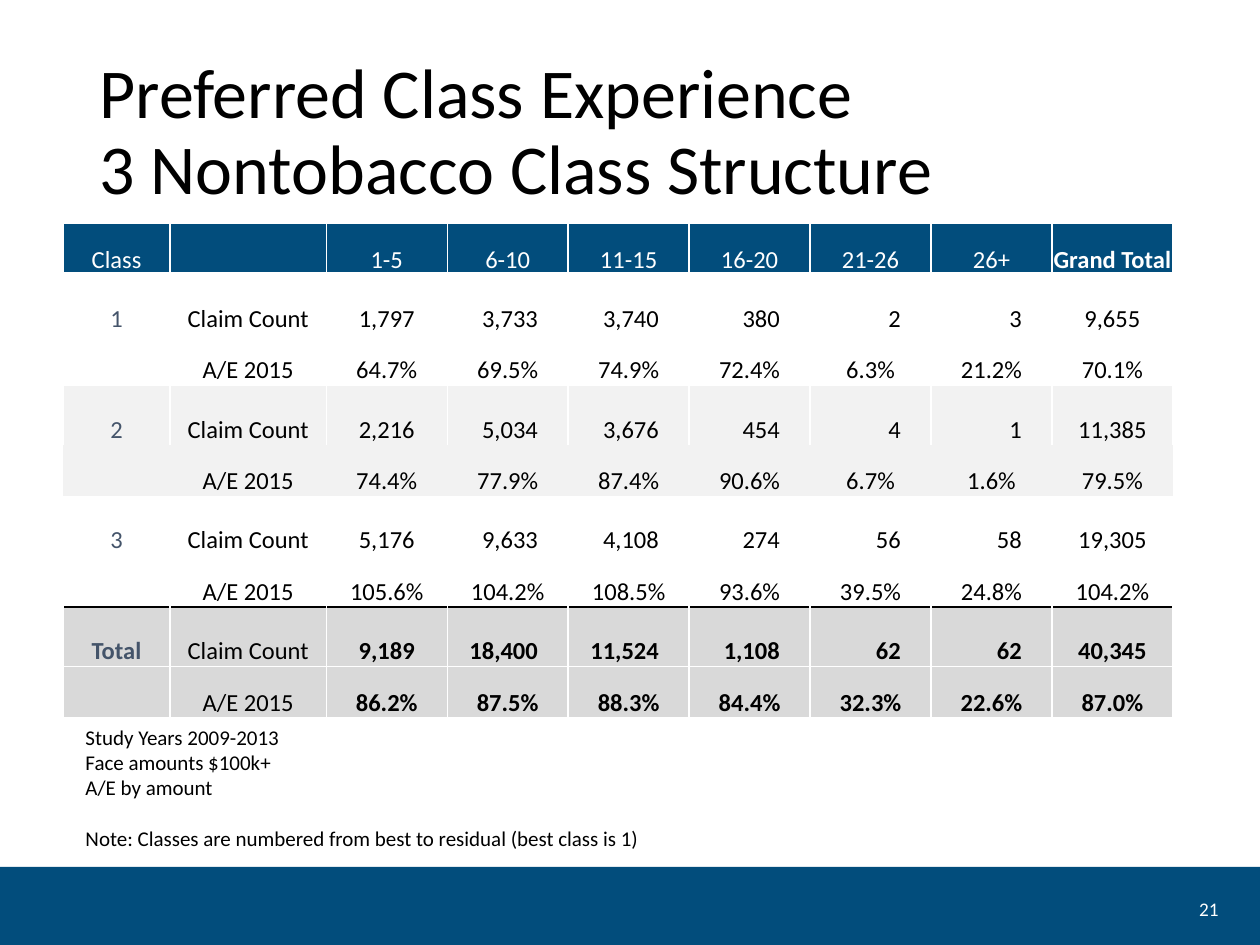
"""Build the slide on preferred class experience for three nontobacco classes."""
from lxml import etree
from pptx import Presentation
from pptx import util as u
from pptx.dml.color import RGBColor
from pptx.enum import shapes, text
from pptx.oxml.ns import qn

TITLE = "Preferred Class Experience\v3 Nontobacco Class Structure"
HEADER = ["Class", "", "1-5", "6-10", "11-15", "16-20", "21-26", "26+", "Grand Total"]
CLASSES = [
    ("1", "FFFFFF",
     ["1,797", "3,733", "3,740", "380", "2", "3", "9,655"],
     ["64.7%", "69.5%", "74.9%", "72.4%", "6.3%", "21.2%", "70.1%"]),
    ("2", "F2F2F2",
     ["2,216", "5,034", "3,676", "454", "4", "1", "11,385"],
     ["74.4%", "77.9%", "87.4%", "90.6%", "6.7%", "1.6%", "79.5%"]),
    ("3", "FFFFFF",
     ["5,176", "9,633", "4,108", "274", "56", "58", "19,305"],
     ["105.6%", "104.2%", "108.5%", "93.6%", "39.5%", "24.8%", "104.2%"]),
    ("Total", "D9D9D9",
     ["9,189", "18,400", "11,524", "1,108", "62", "62", "40,345"],
     ["86.2%", "87.5%", "88.3%", "84.4%", "32.3%", "22.6%", "87.0%"]),
]
NOTES = ["Study Years 2009-2013", "Face amounts $100k+", "A/E by amount",
         "Note: Classes are numbered from best to residual (best class is 1)"]
PAGE = "21"

NAVY, SLATE, WHITE, BLACK = "024D7C", "44546A", "FFFFFF", "000000"
FONT = "Calibri"
COLUMN_WIDTHS = [0.85, 1.24] + [0.96] * 7
HEADER_HEIGHT, COUNT_HEIGHT, RATIO_HEIGHT = 0.41, 0.47, 0.41
NO_STYLE = "{2D5ABB26-0587-4C30-8999-92F81FD0307C}"
ALIGN, ANCHOR = text.PP_ALIGN, text.MSO_ANCHOR


def rgb(value):
    return RGBColor.from_string(value)


def box(left, top, width, height):
    return [u.Inches(n) for n in (left, top, width, height)]


def style(frame, size, color, align=ALIGN.LEFT, bold=False):
    for paragraph in frame.paragraphs:
        paragraph.alignment = align
        for run in paragraph.runs:
            font = run.font
            font.name, font.size, font.bold = FONT, u.Pt(size), bold
            font.color.rgb = rgb(color)


def set_borders(cell, borders):
    properties = cell._tc.get_or_add_tcPr()
    for index, side in enumerate("LRTB"):
        color, width = borders.get(side, (None, 0))
        line = etree.Element(qn(f"a:ln{side}"), w=str(u.Pt(width)))
        if color:
            fill = etree.SubElement(line, qn("a:solidFill"))
            etree.SubElement(fill, qn("a:srgbClr"), val=color)
        else:
            etree.SubElement(line, qn("a:noFill"))
        properties.insert(index, line)


def row_borders(row):
    borders = {side: (WHITE, 1) for side in "LRTB"}
    if row == 0:
        borders["B"] = (WHITE, 3)
    elif row == 3:
        del borders["B"]
    elif row in (4, 5):
        borders = {}
    elif row == 6:
        borders = {"B": (BLACK, 1)}
    elif row == 7:
        borders["T"] = (BLACK, 1)
    return borders


def fill_row(table, row, values, fill, height):
    table.rows[row].height = u.Inches(height)
    for column, value in enumerate(values):
        is_count = row % 2 == 1 and 3 <= column <= 7
        cell = table.cell(row, column)
        cell.margin_left = cell.margin_top = u.Inches(0.01)
        cell.margin_right = u.Inches(0.24 if is_count else 0.01)
        cell.margin_bottom = 0
        cell.vertical_anchor = ANCHOR.BOTTOM
        cell.fill.solid()
        cell.fill.fore_color.rgb = rgb(fill)
        cell.text_frame.text = value
        color = WHITE if row == 0 else SLATE if column == 0 else BLACK
        bold = value == "Grand Total" or (row > 6 and column != 1)
        style(cell.text_frame, 14, color,
              ALIGN.RIGHT if is_count else ALIGN.CENTER, bold)
        set_borders(cell, row_borders(row))


def add_experience_table(slide):
    rows = [(HEADER, NAVY, HEADER_HEIGHT)]
    for name, fill, counts, ratios in CLASSES:
        rows.append(([name, "Claim Count"] + counts, fill, COUNT_HEIGHT))
        rows.append((["", "A/E 2015"] + ratios, fill, RATIO_HEIGHT))
    frame = slide.shapes.add_table(len(rows), len(HEADER), *box(0.5, 1.77, 8.82, 3.93))
    table = frame.table
    table.horz_banding = False
    table._tbl.tblPr.find(qn("a:tableStyleId")).text = NO_STYLE
    for column, width in zip(table.columns, COLUMN_WIDTHS):
        column.width = u.Inches(width)
    for row, (values, fill, height) in enumerate(rows):
        fill_row(table, row, values, fill, height)


def main():
    deck = Presentation()
    deck.slide_width, deck.slide_height = u.Inches(10), u.Inches(7.5)
    slide = deck.slides.add_slide(deck.slide_layouts[5])

    band = slide.shapes.add_shape(shapes.MSO_SHAPE.RECTANGLE, *box(0, 6.88, 10, 0.62))
    band.shadow.inherit = False
    band.fill.solid()
    band.fill.fore_color.rgb = rgb(NAVY)
    band.line.fill.background()

    title = slide.shapes.title
    title.left, title.top, title.width, title.height = box(0.69, 0.36, 8.62, 1.4)
    title.text_frame.text = TITLE
    title.text_frame.auto_size = text.MSO_AUTO_SIZE.NONE
    title.text_frame.vertical_anchor = ANCHOR.MIDDLE
    title.text_frame.paragraphs[0].line_spacing = 0.9
    style(title.text_frame, 40, BLACK)

    add_experience_table(slide)

    page = slide.shapes.add_textbox(*box(9.24, 7.1, 0.53, 0.22)).text_frame
    page.text = PAGE
    page.word_wrap = True
    page.vertical_anchor = ANCHOR.MIDDLE
    style(page, 11, WHITE, ALIGN.RIGHT)

    notes = slide.shapes.add_textbox(*box(0.58, 5.7, 8.65, 1.15)).text_frame
    notes.text = "\n".join(NOTES)
    notes.word_wrap = True
    style(notes, 12, BLACK)
    notes.paragraphs[-1].space_before = u.Pt(14.4)

    deck.save("out.pptx")


if __name__ == "__main__":
    main()
